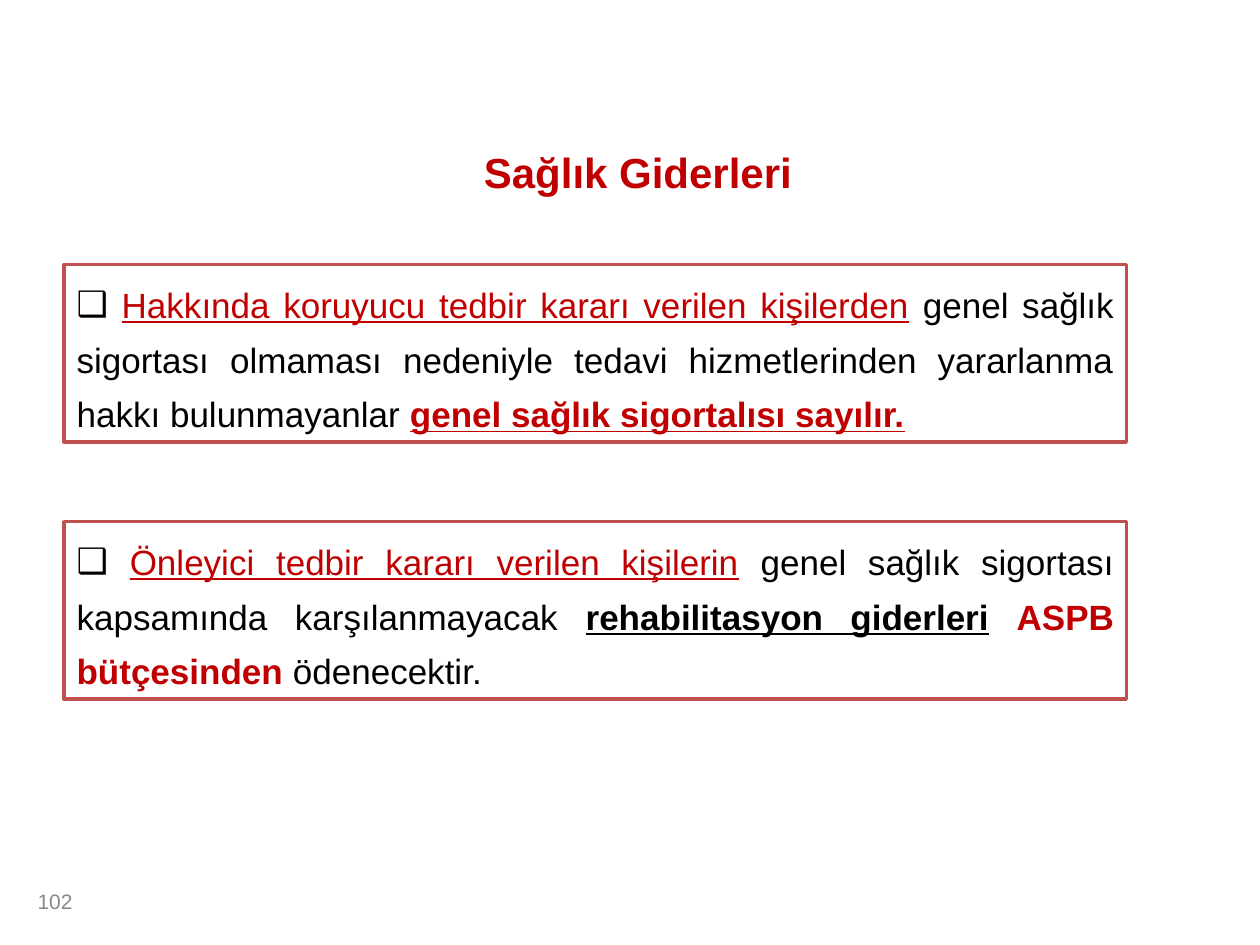
from lxml import etree
from pptx import Presentation
from pptx.dml.color import RGBColor
from pptx.enum.shapes import MSO_SHAPE
from pptx.enum.text import MSO_ANCHOR, MSO_AUTO_SIZE, PP_ALIGN
from pptx.oxml.ns import qn
from pptx.util import Inches, Pt

RECTANGLE = MSO_SHAPE.RECTANGLE
TOP, MIDDLE = MSO_ANCHOR.TOP, MSO_ANCHOR.MIDDLE
FIT_SHAPE = MSO_AUTO_SIZE.SHAPE_TO_FIT_TEXT
LEFT, JUSTIFY = PP_ALIGN.LEFT, PP_ALIGN.JUSTIFY

COLORS = {
    "text": "000000",
    "accent": "C00000",
    "border": "C0504D",
    "box": "FFFFFF",
    "number": "898989",
}
FONT = "Arial"
TITLE_ONLY = 5


def color(name):
    return RGBColor.from_string(COLORS[name])


def add_bullet(p, char):
    """Put a bullet in line with the text, without a hanging indent."""
    pPr = p._p.get_or_add_pPr()
    pPr.set("marL", "0")
    pPr.set("indent", "0")
    etree.SubElement(pPr, qn("a:buFont")).set("typeface", FONT)
    etree.SubElement(pPr, qn("a:buChar")).set("char", char)


def write(tf, runs, size, align=LEFT, spacing=None, anchor=TOP, bullet=None):
    """Fill a text frame with one paragraph of (text, format) runs."""
    tf.word_wrap = True
    tf.vertical_anchor = anchor
    p = tf.paragraphs[0]
    p.alignment = align
    if spacing:
        p.line_spacing = spacing
    if bullet:
        add_bullet(p, bullet)
    for text, style in runs:
        r = p.add_run()
        r.text = text
        r.font.name = FONT
        r.font.size = Pt(size)
        r.font.bold = style.get("bold", False)
        r.font.underline = style.get("underline", False)
        r.font.color.rgb = color(style.get("color", "text"))


class SlideBuilder:
    def __init__(self, prs):
        self.s = prs.slides.add_slide(prs.slide_layouts[TITLE_ONLY])

    def title(self, text, left, top, width, height):
        sp = self.s.shapes.title
        sp.left, sp.top = Inches(left), Inches(top)
        sp.width, sp.height = Inches(width), Inches(height)
        write(sp.text_frame, [(text, {"bold": True, "color": "accent"})],
              size=24, align=JUSTIFY, spacing=1.5)
        sp.text_frame.auto_size = FIT_SHAPE

    def page_number(self, text, left, top, width, height):
        sp = self.s.shapes.add_textbox(
            Inches(left), Inches(top), Inches(width), Inches(height))
        write(sp.text_frame, [(text, {"color": "number"})],
              size=12, anchor=MIDDLE)

    def bullet_box(self, runs, left, top, width, height):
        sp = self.s.shapes.add_shape(
            RECTANGLE, Inches(left), Inches(top), Inches(width), Inches(height))
        sp.shadow.inherit = False
        sp.fill.solid()
        sp.fill.fore_color.rgb = color("box")
        sp.line.color.rgb = color("border")
        sp.line.width = Pt(2)
        write(sp.text_frame, runs, size=20, align=JUSTIFY, spacing=1.3,
              bullet="❑")
        sp.text_frame.auto_size = FIT_SHAPE


def main():
    prs = Presentation()
    prs.slide_width, prs.slide_height = Inches(10), Inches(7.5)
    slide = SlideBuilder(prs)

    plain = {}
    subject = {"color": "accent", "underline": True}
    strong = {"color": "accent", "bold": True}
    provisions = [
        [(" ", plain),
         ("Hakkında koruyucu tedbir kararı verilen kişilerden", subject),
         (" genel sağlık sigortası olmaması nedeniyle tedavi hizmetlerinden "
          "yararlanma hakkı bulunmayanlar ", plain),
         ("genel sağlık sigortalısı sayılır.", {**strong, "underline": True})],
        [(" ", plain),
         ("Önleyici tedbir kararı verilen kişilerin", subject),
         (" genel sağlık sigortası kapsamında karşılanmayacak ", plain),
         ("rehabilitasyon giderleri", {"bold": True, "underline": True}),
         (" ", plain),
         ("ASPB bütçesinden", strong),
         (" ödenecektir.", plain)],
    ]

    slide.page_number("102", 0.2, 6.95, 2.33, 0.4)
    slide.title("Sağlık Giderleri", 3.74, 0.91, 4.17, 0.63)
    for i, runs in enumerate(provisions):
        slide.bullet_box(runs, 0.51, 2.1 + i * 2.04, 8.43, 1.41)

    prs.save("out.pptx")


if __name__ == "__main__":
    main()
